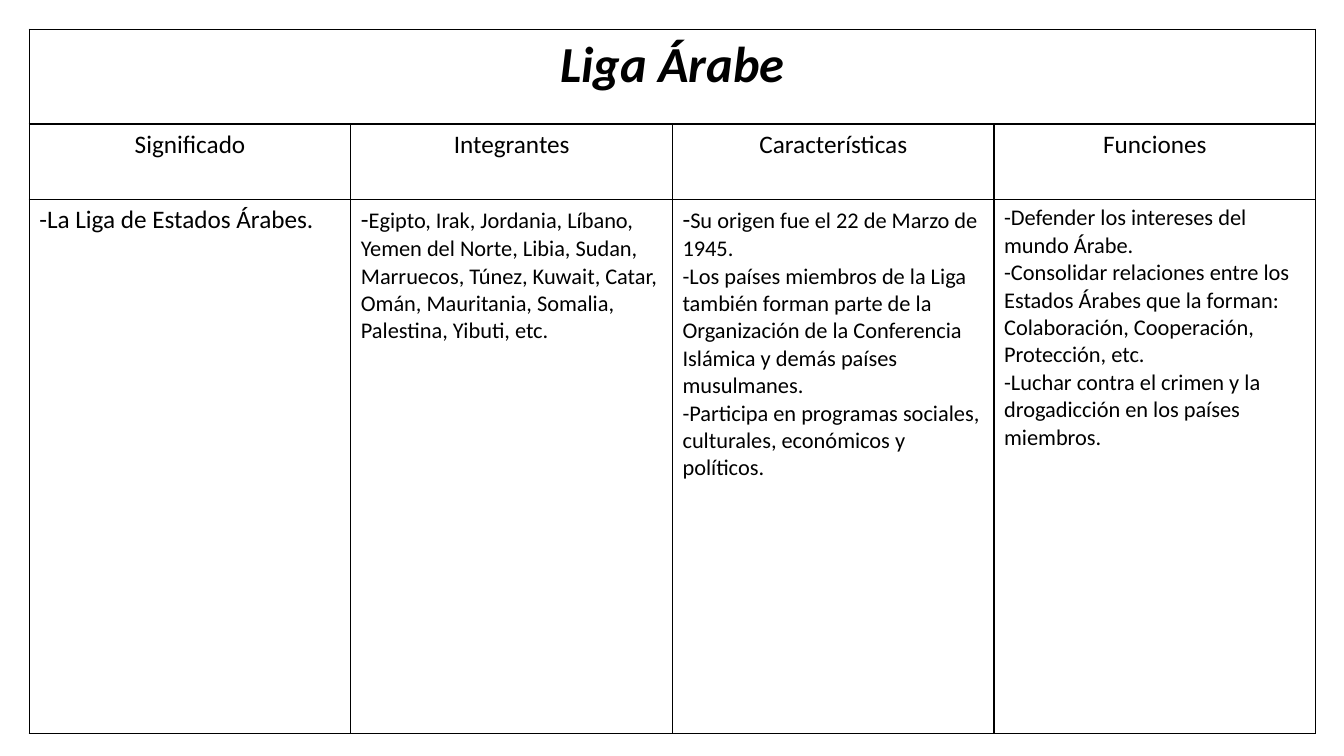
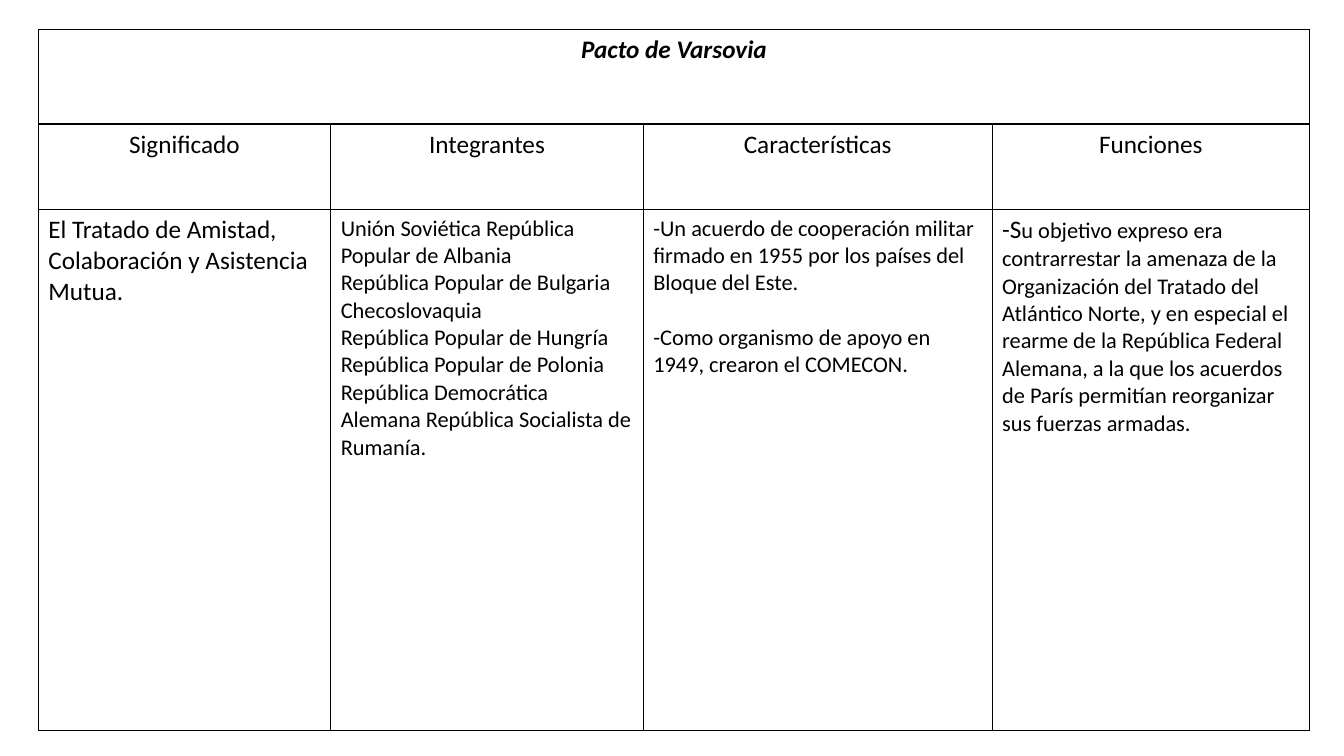
from dataclasses import dataclass

from lxml import etree
from pptx import Presentation
from pptx.dml.color import RGBColor
from pptx.enum.text import PP_ALIGN
from pptx.oxml.ns import qn
from pptx.util import Inches, Pt

LEFT, CENTER = PP_ALIGN.LEFT, PP_ALIGN.CENTER


@dataclass(frozen=True)
class Theme:
    font: str = "Calibri"
    ink: str = "000000"
    large: int = 18
    small: int = 16
    line: int = 1


THEME = Theme()
HEADS = ["Significado", "Integrantes", "Características", "Funciones"]

# Each body cell: a larger opening, then its paragraphs
TABLES = [
    {
        "title": "Liga Árabe", "size": 36,
        "left": 0.29, "cols": [3.19] * 4, "rows": [0.94, 0.75, 5.3],
        "body": [
            ("", ["-La Liga de Estados Árabes."]),
            ("-", ["Egipto, Irak, Jordania, Líbano, Yemen del Norte, Libia, Sudan, "
                   "Marruecos, Túnez, Kuwait, Catar, Omán, Mauritania, Somalia, "
                   "Palestina, Yibuti, etc."]),
            ("-", ["Su origen fue el 22 de Marzo de 1945.",
                   "-Los países miembros de la Liga también forman parte de la "
                   "Organización de la Conferencia Islámica y demás países musulmanes.",
                   "-Participa en programas sociales, culturales, económicos y políticos."]),
            ("", ["-Defender los intereses del mundo Árabe.",
                  "-Consolidar relaciones entre los Estados Árabes que la forman: "
                  "Colaboración, Cooperación, Protección, etc.",
                  "-Luchar contra el crimen y la drogadicción en los países miembros."]),
        ],
        "gaps": {},
    },
    {
        "title": "Pacto de Varsovia", "size": 18,
        "left": 0.38, "cols": [2.9, 3.1, 3.46, 3.15], "rows": [0.94, 0.85, 5.17],
        "body": [
            ("", ["El Tratado de Amistad, Colaboración y Asistencia Mutua."]),
            ("", ["Unión Soviética República Popular de Albania",
                  "República Popular de Bulgaria Checoslovaquia",
                  "República Popular de Hungría",
                  "República Popular de Polonia",
                  "República Democrática Alemana República Socialista de Rumanía."]),
            ("", ["-Un acuerdo de cooperación militar firmado en 1955 por los países "
                  "del Bloque del Este.",
                  "-Como organismo de apoyo en 1949, crearon el COMECON."]),
            ("-S", ["u objetivo expreso era contrarrestar la amenaza de la Organización "
                    "del Tratado del Atlántico Norte, y en especial el rearme de la "
                    "República Federal Alemana, a la que los acuerdos de París "
                    "permitían reorganizar sus fuerzas armadas."]),
        ],
        "gaps": {2: 19.5},  # column: points between its paragraphs
    },
]


def frame(cell):
    """Clear the fill and draw the four borders."""
    cell.fill.background()
    props = cell._tc.get_or_add_tcPr()
    for i, side in enumerate(["lnL", "lnR", "lnT", "lnB"]):
        line = etree.Element(qn(f"a:{side}"), w=str(Pt(THEME.line)))
        fill = etree.SubElement(line, qn("a:solidFill"))
        etree.SubElement(fill, qn("a:srgbClr"), val=THEME.ink)
        props.insert(i, line)


def write(cell, lines, size, align=LEFT, lead="", strong=False, gap=0):
    """Fill a cell with paragraphs, the first after an optional lead."""
    cell.text_frame.text = "\n".join(lines)
    for i, para in enumerate(cell.text_frame.paragraphs):
        para.alignment = align
        if i and gap:
            para.space_before = Pt(gap)
        if lead and i == 0:
            para.text = lead
            para.add_run().text = lines[0]
        for run in para.runs:
            font = run.font
            font.name, font.size = THEME.font, Pt(size)
            font.bold = font.italic = strong
            font.color.rgb = RGBColor.from_string(THEME.ink)
        if lead and i == 0:
            para.runs[0].font.size = Pt(THEME.large)


deck = Presentation()
deck.slide_width, deck.slide_height = Inches(13.33), Inches(7.5)
blank = deck.slide_layouts[6]

for data in TABLES:
    slide = deck.slides.add_slide(blank)
    cols, rows = data["cols"], data["rows"]
    table = slide.shapes.add_table(
        len(rows), len(cols), Inches(data["left"]), Inches(0.29),
        Inches(sum(cols)), Inches(sum(rows))).table
    table.first_row = table.horz_banding = False

    # Grid
    for col, width in zip(table.columns, cols):
        col.width = Inches(width)
    for row, height in zip(table.rows, rows):
        row.height = Inches(height)
    for cell in table.iter_cells():
        frame(cell)

    # Title across the top
    top = table.cell(0, 0)
    top.merge(table.cell(0, len(cols) - 1))
    write(top, [data["title"]], data["size"], CENTER, strong=True)

    # Headings and body
    for c, (head, (lead, lines)) in enumerate(zip(HEADS, data["body"])):
        write(table.cell(1, c), [head], THEME.large, CENTER)
        size = THEME.small if c else THEME.large
        write(table.cell(2, c), lines, size, lead=lead, gap=data["gaps"].get(c, 0))

deck.save("out.pptx")
